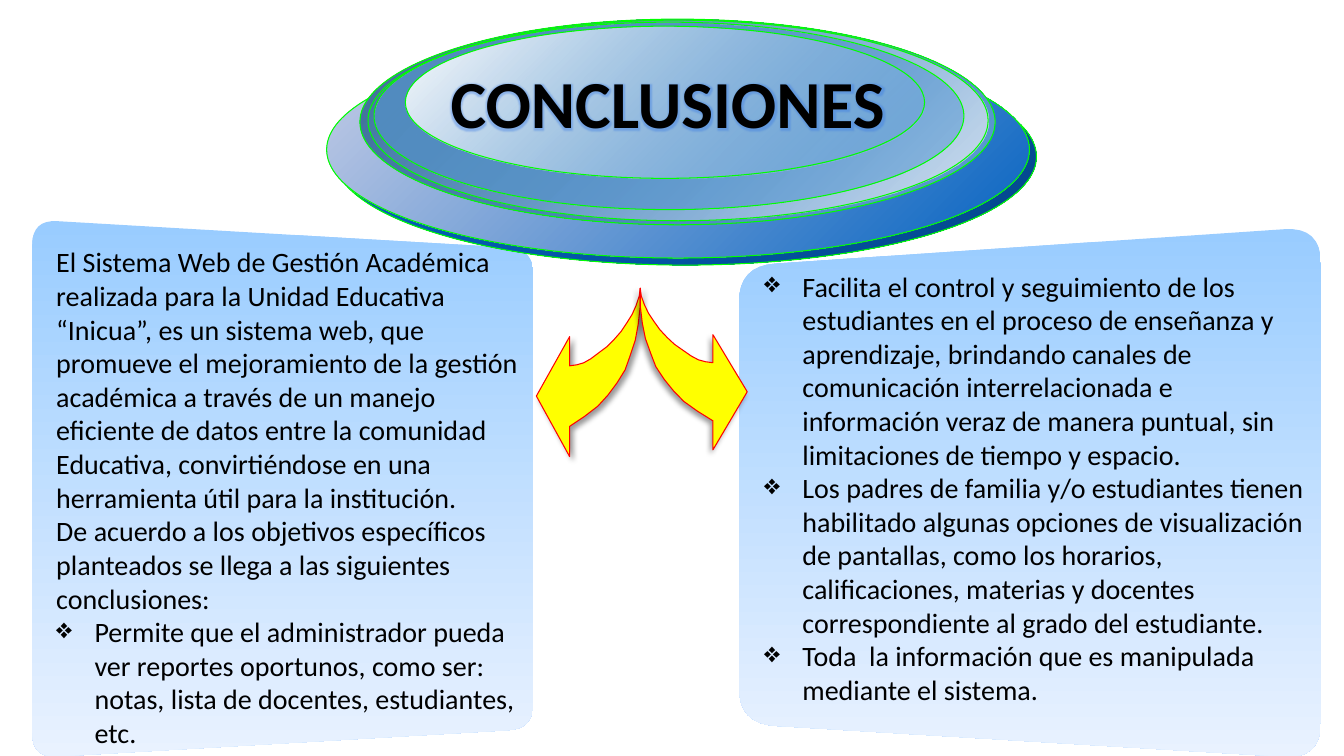
import math
from lxml import etree
from pptx import Presentation
from pptx.dml.color import RGBColor
from pptx.enum import shapes, text
from pptx.oxml import ns
from pptx.util import Inches, Pt

BLACK = RGBColor(0x00, 0x00, 0x00)
YELLOW = RGBColor(0xFF, 0xFF, 0x00)
RED = RGBColor(0xFF, 0x00, 0x00)
LIME = RGBColor(0x00, 0xFF, 0x00)
SKY = RGBColor(0x99, 0xCC, 0xFF)
ICE = RGBColor(0xE9, 0xF2, 0xFF)
BLUE = RGBColor(0x05, 0x63, 0xC1)
NAVY = RGBColor(0x04, 0x48, 0x8D)
LAVENDER = RGBColor(0xC6, 0xCD, 0xE6)
STEEL = RGBColor(0x41, 0x6F, 0x98)
MID_BLUE = RGBColor(0x5B, 0x9B, 0xD5)
MIST = RGBColor(0xD8, 0xE3, 0xF1)
DENIM = RGBColor(0x52, 0x8C, 0xC0)
WHITE = RGBColor(0xFF, 0xFF, 0xFF)
GLOW = RGBColor(0x3B, 0x7B, 0xE5)

prs = Presentation()
prs.slide_width, prs.slide_height = Inches(13.33), Inches(7.5)
s = prs.slides.add_slide(prs.slide_layouts[6])


def add_outline(points):
    pts = [(Inches(x), Inches(y)) for x, y in points]
    builder = s.shapes.build_freeform(*pts[0])
    builder.add_line_segments(pts[1:], close=True)
    sp = builder.convert_to_shape()
    sp.shadow.inherit = False
    return sp


def fill_gradient(sp, angle, stops):
    sp.fill.gradient()
    sp.fill.gradient_angle = angle
    for stop, (color, opacity) in zip(sp.fill.gradient_stops, stops):
        stop.color.rgb = color
    # Opacity of each stop
    for clr, (color, opacity) in zip(sp._element.spPr.iter(ns.qn("a:srgbClr")), stops):
        if opacity < 100:
            etree.SubElement(clr, ns.qn("a:alpha"), val=str(opacity * 1000))


# Slanted panels with rounded corners
panels = [
    (0.36, [(7.33, 2.64), (13.1, 2.25), (13.1, 7.53), (7.33, 7.18)]),
    (0.25, [(0.32, 2.18), (5.29, 2.47), (5.29, 7.23), (0.32, 7.52)]),
]
for radius, corners in panels:
    points = []
    for i, (cx, cy) in enumerate(corners):
        ends = []
        for nx, ny in (corners[i - 1], corners[(i + 1) % 4]):
            t = radius / math.hypot(nx - cx, ny - cy)
            ends.append((cx + t * (nx - cx), cy + t * (ny - cy)))
        (ax, ay), (bx, by) = ends
        for step in range(9):
            t = step / 8
            a, c, b = (1 - t) ** 2, 2 * t * (1 - t), t ** 2
            points.append((a * ax + c * cx + b * bx, a * ay + c * cy + b * by))
    sp = add_outline(points)
    fill_gradient(sp, 270, [(SKY, 100), (ICE, 100)])
    sp.line.fill.background()

# Curved arrows: one profile measured from the shared tip, mirrored
ARROW = [
    (0, 0), (0, 0.18), (0.02, 0.36), (0.05, 0.52), (0.1, 0.67), (0.15, 0.81),
    (0.23, 0.94), (0.32, 1.06), (0.42, 1.17), (0.55, 1.27), (0.7, 1.37),
    (0.7, 1.67), (1.03, 1.07), (0.7, 0.48), (0.7, 0.77), (0.63, 0.76),
    (0.56, 0.74), (0.49, 0.7), (0.41, 0.64), (0.33, 0.58), (0.26, 0.51),
    (0.19, 0.43), (0.13, 0.34), (0.08, 0.26), (0.04, 0.17), (0.01, 0.08),
]
for sx, sy, direction in [(-1, 1, 45), (1.03, 0.96, 135)]:
    sp = add_outline([(6.35 + sx * x, 2.86 + sy * y) for x, y in ARROW])
    sp.fill.solid()
    sp.fill.fore_color.rgb = YELLOW
    sp.line.color.rgb = RED
    sp.line.width = Pt(0.75)
    effects = sp._element.spPr.find(ns.qn("a:effectLst"))
    shadow = etree.SubElement(effects, ns.qn("a:outerShdw"), blurRad=str(Pt(4)),
                              dist=str(Pt(3)), dir=str(direction * 60000))
    clr = etree.SubElement(shadow, ns.qn("a:srgbClr"), val=str(BLACK))
    etree.SubElement(clr, ns.qn("a:alpha"), val="40000")

# Title medallion: stacked ellipses
ellipses = [
    (3.31, 0.48, 6.97, 2.15, (BLUE, 100), (NAVY, 100)),
    (3.24, 0.41, 6.97, 2.15, (LAVENDER, 100), (BLUE, 100)),
    (3.57, 0.19, 6.3, 2.04, (STEEL, 100), (MID_BLUE, 100)),
    (3.65, 0.2, 6.15, 1.99, (MID_BLUE, 0), (MIST, 100)),
    (3.71, 0.22, 5.85, 1.86, (DENIM, 100), (MID_BLUE, 48)),
    (4.02, 0.26, 5.15, 1.51, (WHITE, 100), (MID_BLUE, 38)),
]
medallion = s.shapes.add_group_shape()
for x, y, w, h, start, end in ellipses:
    sp = medallion.shapes.add_shape(shapes.MSO_SHAPE.OVAL, Inches(x), Inches(y), Inches(w), Inches(h))
    sp.shadow.inherit = False
    fill_gradient(sp, 315, [start, end])
    sp.line.color.rgb = LIME
    sp.line.width = Pt(0.75)

# Texts: box, font format, paragraphs as (bulleted, wording)
body = {"size": Pt(20), "name": "Calibri"}
heading = {"size": Pt(48), "name": "Calibri", "bold": True}
texts = [
    ((0.46, 2.38, 4.86, 5.49), body, [
        (False, "El Sistema Web de Gestión Académica realizada para la Unidad Educativa “Inicua”, "
                "es un sistema web, que promueve el mejoramiento de la gestión académica a través "
                "de un manejo eficiente de datos entre la comunidad Educativa, convirtiéndose en "
                "una herramienta útil para la institución."),
        (False, "De acuerdo a los objetivos específicos planteados se llega a las siguientes "
                "conclusiones:"),
        (True, "Permite que el administrador pueda ver reportes oportunos, como ser: notas, "
               "lista de docentes, estudiantes, etc."),
    ]),
    ((7.48, 2.62, 5.59, 5.15), body, [
        (True, "Facilita el control y seguimiento de los estudiantes en el proceso de enseñanza y "
               "aprendizaje, brindando canales de comunicación interrelacionada e información "
               "veraz de manera puntual, sin limitaciones de tiempo y espacio."),
        (True, "Los padres de familia y/o estudiantes tienen habilitado algunas opciones de "
               "visualización de pantallas, como los horarios, calificaciones, materias y docentes "
               "correspondiente al grado del estudiante."),
        (True, "Toda  la información que es manipulada mediante el sistema."),
    ]),
    ((4.37, 0.56, 5.01, 0.91), heading, [(False, "CONCLUSIONES")]),
]
for box, fmt, paragraphs in texts:
    tf = s.shapes.add_textbox(*map(Inches, box)).text_frame
    tf.word_wrap = True
    tf.auto_size = text.MSO_AUTO_SIZE.SHAPE_TO_FIT_TEXT
    for i, (bulleted, wording) in enumerate(paragraphs):
        p = tf.add_paragraph() if i else tf.paragraphs[0]
        if bulleted:
            pPr = p._p.get_or_add_pPr()
            pPr.set("marL", str(Inches(0.38)))
            pPr.set("indent", str(Inches(-0.38)))
            etree.SubElement(pPr, ns.qn("a:buChar"), char="❖")
        r = p.add_run()
        r.text = wording
        for key, value in fmt.items():
            setattr(r.font, key, value)
        r.font.color.rgb = BLACK

# Blue glow around the title, the last run written
effects = etree.Element(ns.qn("a:effectLst"))
glow = etree.SubElement(effects, ns.qn("a:glow"), rad=str(Pt(5)))
clr = etree.SubElement(glow, ns.qn("a:srgbClr"), val=str(GLOW))
etree.SubElement(clr, ns.qn("a:alpha"), val="40000")
r._r.rPr.find(ns.qn("a:solidFill")).addnext(effects)

prs.save("out.pptx")
